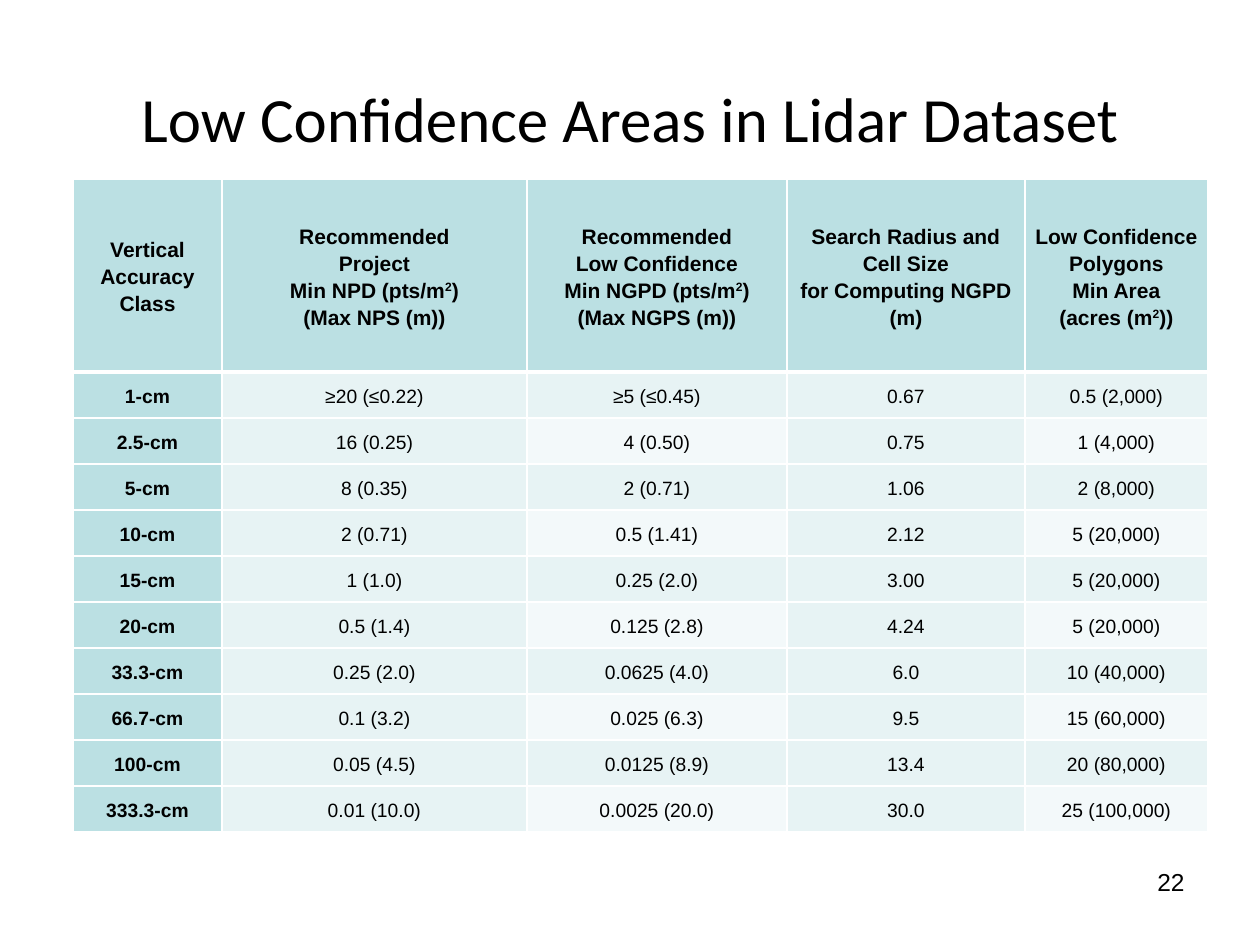
from lxml import etree
from pptx import Presentation, util as u
from pptx.dml.color import RGBColor
from pptx.enum import text
from pptx.oxml.ns import qn

PX = 914400 // 126
BLACK = RGBColor(0x00, 0x00, 0x00)
TEAL = RGBColor(0xBB, 0xE0, 0xE3)
PALE = RGBColor(0xE7, 0xF3, 0xF4)
PALEST = RGBColor(0xF3, 0xF9, 0xFA)

HEADERS = [
    ["Vertical Accuracy Class"],
    ["Recommended", "Project", "Min NPD (pts/m^2)", "(Max NPS (m))"],
    ["Recommended", "Low Confidence", "Min NGPD (pts/m^2)", "(Max NGPS (m))"],
    ["Search Radius and Cell Size", "for Computing NGPD (m)"],
    ["Low Confidence Polygons", "Min Area", "(acres (m^2))"],
]
ROWS = [
    ["1-cm", "≥20 (≤0.22)", "≥5 (≤0.45)", "0.67", "0.5 (2,000)"],
    ["2.5-cm", "16 (0.25)", "4 (0.50)", "0.75", "1 (4,000)"],
    ["5-cm", "8 (0.35)", "2 (0.71)", "1.06", "2 (8,000)"],
    ["10-cm", "2 (0.71)", "0.5 (1.41)", "2.12", "5 (20,000)"],
    ["15-cm", "1 (1.0)", "0.25 (2.0)", "3.00", "5 (20,000)"],
    ["20-cm", "0.5 (1.4)", "0.125 (2.8)", "4.24", "5 (20,000)"],
    ["33.3-cm", "0.25 (2.0)", "0.0625 (4.0)", "6.0", "10 (40,000)"],
    ["66.7-cm", "0.1 (3.2)", "0.025 (6.3)", "9.5", "15 (60,000)"],
    ["100-cm", "0.05 (4.5)", "0.0125 (8.9)", "13.4", "20 (80,000)"],
    ["333.3-cm", "0.01 (10.0)", "0.0025 (20.0)", "30.0", "25 (100,000)"],
]
COL_WIDTHS = [149, 305, 260, 238, 183]
HEADER_HEIGHT, ROW_HEIGHT = 193, 46


def style(p, font, size, align, bold=False):
    p.alignment = align
    p.font.name = font
    p.font.size = u.Pt(size)
    p.font.bold = bold
    p.font.color.rgb = BLACK


def add_border(cell, side, points):
    ln = etree.SubElement(cell._tc.get_or_add_tcPr(), qn(f"a:{side}"), w=str(u.Pt(points)))
    fill = etree.SubElement(ln, qn("a:solidFill"))
    etree.SubElement(fill, qn("a:srgbClr"), val="FFFFFF")


prs = Presentation()
prs.slide_width, prs.slide_height = u.Inches(10), u.Inches(7.5)
s = prs.slides.add_slide(prs.slide_layouts[6])

for words, box, font, size, align, anchor in [
    ("Low Confidence Areas in Lidar Dataset", (63, 38, 1134, 158), "Calibri", 36,
     text.PP_ALIGN.CENTER, text.MSO_ANCHOR.MIDDLE),
    ("22", (903, 861, 294, 66), "Arial", 14, text.PP_ALIGN.RIGHT, text.MSO_ANCHOR.TOP),
]:
    tf = s.shapes.add_textbox(*[v * PX for v in box]).text_frame
    tf.word_wrap = True
    tf.vertical_anchor = anchor
    tf.text = words
    style(tf.paragraphs[0], font, size, align)

table_height = HEADER_HEIGHT + ROW_HEIGHT * len(ROWS)
table = s.shapes.add_table(len(ROWS) + 1, len(COL_WIDTHS), 73 * PX, 179 * PX,
                           sum(COL_WIDTHS) * PX, table_height * PX).table
table.horz_banding = False
for col, width in zip(table.columns, COL_WIDTHS):
    col.width = width * PX
for i, row in enumerate(table.rows):
    row.height = (ROW_HEIGHT if i else HEADER_HEIGHT) * PX

cells = [HEADERS] + [[[value] for value in row] for row in ROWS]
for i, row in enumerate(cells):
    for j, lines in enumerate(row):
        cell = table.cell(i, j)
        cell.margin_left = cell.margin_right = 9 * PX
        cell.margin_top = cell.margin_bottom = 0
        cell.vertical_anchor = text.MSO_ANCHOR.MIDDLE
        add_border(cell, "lnL", 1)
        add_border(cell, "lnR", 1)
        add_border(cell, "lnT", 3 if i == 1 else 1)
        add_border(cell, "lnB", 3 if i == 0 else 1)
        cell.fill.solid()
        if i == 0 or j == 0:
            cell.fill.fore_color.rgb = TEAL
        elif i % 2 == 0 and j % 2 == 0:
            cell.fill.fore_color.rgb = PALEST
        else:
            cell.fill.fore_color.rgb = PALE

        tf = cell.text_frame
        for k, line in enumerate(lines):
            p = tf.add_paragraph() if k else tf.paragraphs[0]
            style(p, "Arial", 11 if i else 12, text.PP_ALIGN.CENTER, i == 0 or j == 0)
            p.line_spacing = 1.15
            before, mark, after = line.partition("^2")
            p.add_run().text = before
            if mark:
                r = p.add_run()
                r.text = "2"
                r._r.get_or_add_rPr().set("baseline", "30000")
                p.add_run().text = after

prs.save("out.pptx")
